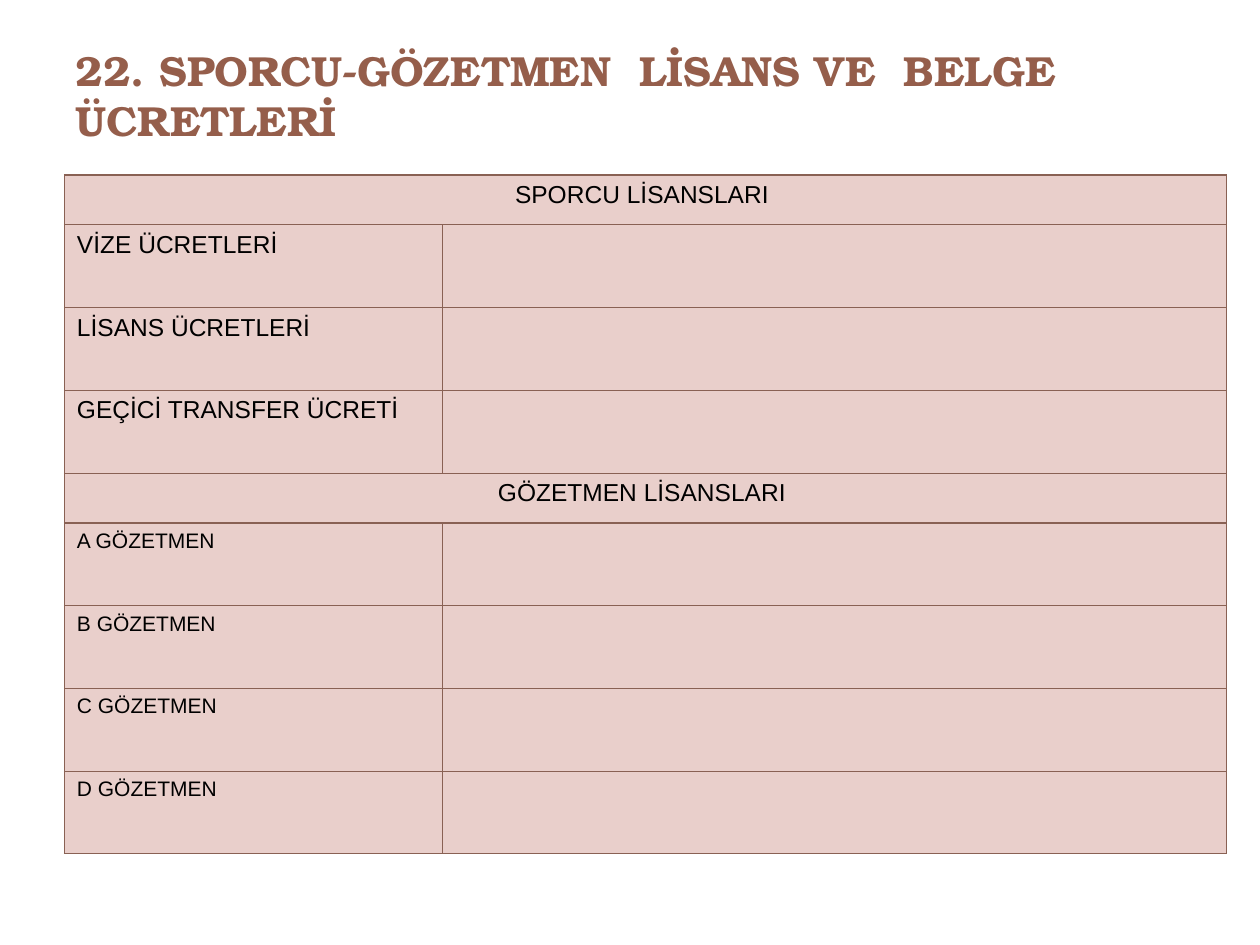
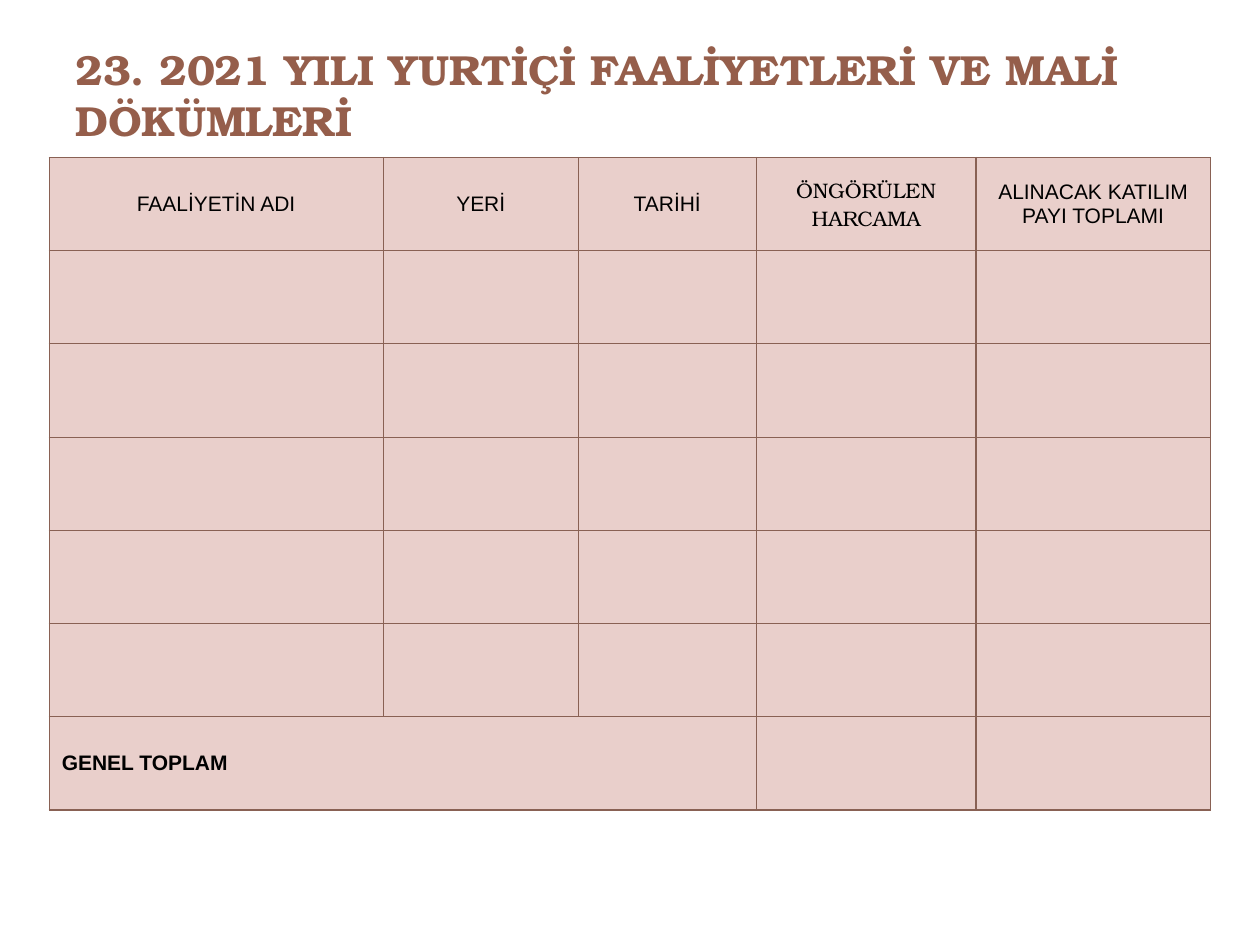
from dataclasses import dataclass
from lxml.etree import SubElement
from pptx import Presentation
from pptx.dml.color import RGBColor as Color
from pptx.enum.text import MSO_ANCHOR as Anchor, PP_ALIGN as Align
from pptx.oxml import parse_xml
from pptx.oxml.ns import nsdecls, qn
from pptx.util import Pt


@dataclass(frozen=True)
class Theme:
    title_color: str = "955E4B"
    text_color: str = "000000"
    cell_color: str = "E9CFCB"
    border_color: str = "896154"
    border_width: float = 0.75
    title_font: str = "TeX Gyre Bonum"
    body_font: str = "Arial"
    title_size: int = 24
    large_size: int = 14
    small_size: int = 12


THEME = Theme()


@dataclass(frozen=True)
class Box:
    left: float
    top: float
    width: float
    height: float

    def lengths(self):
        return [Pt(value) for value in (self.left, self.top, self.width, self.height)]


def style_para(para, size, color, font, bold=False, align=Align.LEFT):
    para.alignment = align
    for span in para.runs:
        span.font.size = Pt(size)
        span.font.name = font
        span.font.bold = bold
        span.font.color.rgb = Color.from_string(color)


def add_title(page, box, text):
    frame = page.shapes.add_textbox(*box.lengths()).text_frame
    frame.word_wrap = True
    frame.vertical_anchor = Anchor.TOP
    frame.text = text
    style_para(frame.paragraphs[0], THEME.title_size, THEME.title_color,
               THEME.title_font, bold=True)


def add_borders(cell):
    properties = cell._tc.get_or_add_tcPr()
    for index, side in enumerate(("lnL", "lnR", "lnT", "lnB")):
        line = parse_xml(f'<a:{side} {nsdecls("a")} w="{Pt(THEME.border_width)}"/>')
        fill = SubElement(line, qn("a:solidFill"))
        SubElement(fill, qn("a:srgbClr"), val=THEME.border_color)
        properties.insert(index, line)


def add_grid(page, box, column_widths, row_heights):
    table = page.shapes.add_table(
        len(row_heights), len(column_widths), *box.lengths()).table
    table.first_row = False
    table.horz_banding = False
    for column, width in zip(table.columns, column_widths):
        column.width = Pt(width)
    for row, height in zip(table.rows, row_heights):
        row.height = Pt(height)
    for cell in table.iter_cells():
        cell.fill.solid()
        cell.fill.fore_color.rgb = Color.from_string(THEME.cell_color)
        add_borders(cell)
    return table


def fill_cell(cell, text, size, font=THEME.body_font, bold=False,
              align=Align.LEFT, anchor=Anchor.TOP):
    cell.text = text
    cell.vertical_anchor = anchor
    style_para(cell.text_frame.paragraphs[0], size, THEME.text_color, font, bold, align)


def add_fee_table(page, box, sections):
    heading_height, fee_height = 28.5, 47.3
    label_width = 216
    heights = []
    for _, _, labels in sections:
        heights += [heading_height] + [fee_height] * len(labels)
    table = add_grid(page, box, [label_width, box.width - label_width], heights)
    row = 0
    for heading, label_size, labels in sections:
        table.cell(row, 0).merge(table.cell(row, 1))
        fill_cell(table.cell(row, 0), heading, THEME.large_size, align=Align.CENTER)
        for offset, label in enumerate(labels, 1):
            fill_cell(table.cell(row + offset, 0), label, label_size)
        row += len(labels) + 1


def add_activity_table(page, box, columns, total_label):
    row_count = 7
    table = add_grid(page, box, [width for _, width, _ in columns],
                     [box.height / row_count] * row_count)
    for index, (heading, _, font) in enumerate(columns):
        fill_cell(table.cell(0, index), heading, THEME.small_size, font,
                  align=Align.CENTER, anchor=Anchor.MIDDLE)
    total = table.cell(row_count - 1, 0)
    total.merge(table.cell(row_count - 1, 2))
    fill_cell(total, total_label, THEME.small_size, bold=True, anchor=Anchor.MIDDLE)


def build_fee_page(page):
    add_title(page, Box(36, 21.6, 648, 90),
              "22. SPORCU-GÖZETMEN  LİSANS VE  BELGE ÜCRETLERİ")
    add_fee_table(page, Box(36.8, 100, 664, 388), [
        ("SPORCU LİSANSLARI ", THEME.large_size,
         ["VİZE ÜCRETLERİ", "LİSANS ÜCRETLERİ", "GEÇİCİ TRANSFER ÜCRETİ"]),
        ("GÖZETMEN LİSANSLARI ", THEME.small_size,
         [f"{grade} GÖZETMEN" for grade in "ABCD"]),
    ])


def build_activity_page(page):
    add_title(page, Box(36, 21.6, 684, 62.6),
              "23. 2021 YILI YURTİÇİ FAALİYETLERİ VE MALİ DÖKÜMLERİ")
    add_activity_table(page, Box(28.1, 90, 663.6, 373), [
        ("FAALİYETİN ADI", 190.9, THEME.body_font),
        ("YERİ", 111.5, THEME.body_font),
        ("TARİHİ", 101.7, THEME.body_font),
        ("ÖNGÖRÜLEN HARCAMA", 125.6, THEME.title_font),
        ("ALINACAK KATILIM PAYI TOPLAMI", 133.9, THEME.body_font),
    ], "GENEL TOPLAM")


def main():
    deck = Presentation()
    deck.slide_width, deck.slide_height = Pt(720), Pt(540)
    blank = deck.slide_layouts[6]
    for build_page in (build_fee_page, build_activity_page):
        build_page(deck.slides.add_slide(blank))
    deck.save("out.pptx")


if __name__ == "__main__":
    main()
